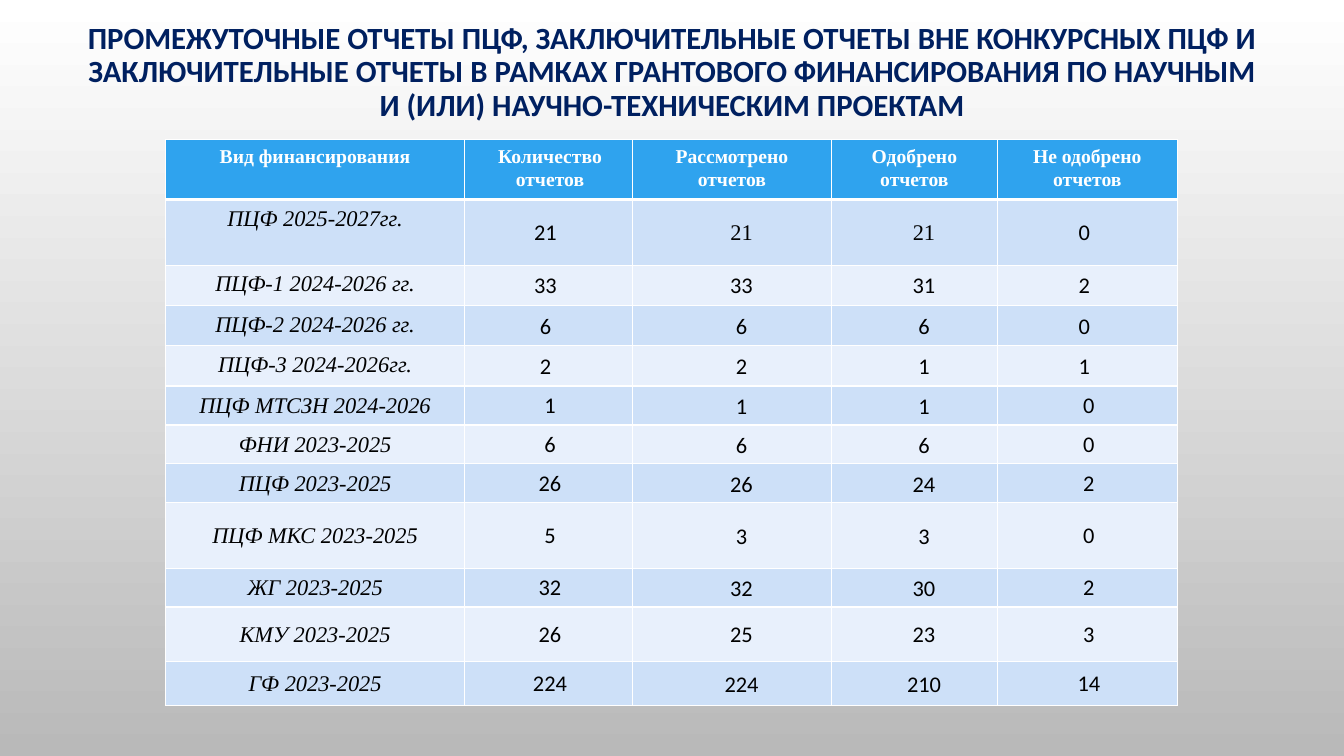
"""Build the slide that summarises research reports by type of funding."""
from dataclasses import dataclass

from lxml.etree import SubElement
from pptx import Presentation
from pptx.dml.color import RGBColor
from pptx.enum.text import MSO_ANCHOR, PP_ALIGN
from pptx.oxml.ns import qn
from pptx.util import Inches, Pt


@dataclass(frozen=True)
class Theme:
    """Colours, fonts and type sizes of the slide."""
    white: str = "FFFFFF"
    grey: str = "B9B9B9"
    navy: str = "002060"
    black: str = "000000"
    header: str = "2FA3EE"
    bands: tuple = ("CDE0F8", "E8F0FC")
    sans: str = "Calibri"
    serif: str = "Times New Roman"
    title_size: int = 22
    header_size: int = 14
    body_size: int = 16


theme = Theme()


def write(text_frame, text, font_name, size, colour, spacing, bold=False, italic=False):
    """Put one centred paragraph into a text frame and return it."""
    text_frame.text = text
    para = text_frame.paragraphs[0]
    para.alignment = PP_ALIGN.CENTER
    para.line_spacing = spacing
    font = para.runs[0].font
    font.name = font_name
    font.size = Pt(size)
    font.bold = bold
    font.italic = italic
    font.color.rgb = RGBColor.from_string(colour)
    return para


def add_borders(cell, top, bottom):
    """Draw white cell borders with the given top and bottom widths in points."""
    properties = cell._tc.get_or_add_tcPr()
    sides = (("a:lnL", 1), ("a:lnR", 1), ("a:lnT", top), ("a:lnB", bottom))
    for position, (tag, width) in enumerate(sides):
        line = SubElement(properties, qn(tag), w=str(Pt(width)))
        fill = SubElement(line, qn("a:solidFill"))
        SubElement(fill, qn("a:srgbClr"), val=theme.white)
        properties.insert(position, line)


deck = Presentation()
deck.slide_width = Inches(13.33)
deck.slide_height = Inches(7.5)
page = deck.slides.add_slide(deck.slide_layouts[6])

backdrop = page.background.fill
backdrop.gradient()
backdrop.gradient_angle = 270
for stop, position, colour in zip(backdrop.gradient_stops, (0, 1), (theme.white, theme.grey)):
    stop.position = position
    stop.color.rgb = RGBColor.from_string(colour)

title_box = page.shapes.add_textbox(Inches(0.72), Inches(-0.14), Inches(11.89), Inches(1.73))
title_frame = title_box.text_frame
title_frame.word_wrap = True
title_frame.vertical_anchor = MSO_ANCHOR.MIDDLE
write(
    title_frame,
    "ПРОМЕЖУТОЧНЫЕ ОТЧЕТЫ ПЦФ, ЗАКЛЮЧИТЕЛЬНЫЕ ОТЧЕТЫ ВНЕ КОНКУРСНЫХ ПЦФ И "
    "ЗАКЛЮЧИТЕЛЬНЫЕ ОТЧЕТЫ В РАМКАХ ГРАНТОВОГО ФИНАНСИРОВАНИЯ ПО НАУЧНЫМ "
    "И (ИЛИ) НАУЧНО-ТЕХНИЧЕСКИМ ПРОЕКТАМ",
    theme.sans, theme.title_size, theme.navy, 0.9, bold=True,
)

headings = ("Вид финансирования", "Количество отчетов", "Рассмотрено отчетов",
            "Одобрено отчетов", "Не одобрено отчетов")
reports = (
    ("ПЦФ 2025-2027гг.", 21, 21, 21, 0),
    ("ПЦФ-1 2024-2026 гг.", 33, 33, 31, 2),
    ("ПЦФ-2 2024-2026 гг.", 6, 6, 6, 0),
    ("ПЦФ-3 2024-2026гг.", 2, 2, 1, 1),
    ("ПЦФ МТСЗН 2024-2026", 1, 1, 1, 0),
    ("ФНИ 2023-2025", 6, 6, 6, 0),
    ("ПЦФ 2023-2025", 26, 26, 24, 2),
    ("ПЦФ МКС 2023-2025", 5, 3, 3, 0),
    ("ЖГ 2023-2025", 32, 32, 30, 2),
    ("КМУ 2023-2025", 26, 25, 23, 3),
    ("ГФ 2023-2025", 224, 224, 210, 14),
)
column_widths = (2.97, 1.66, 1.98, 1.64, 1.79)
row_heights = (0.6, 0.65, 0.4, 0.4, 0.4, 0.38, 0.38, 0.38, 0.65, 0.38, 0.54, 0.44)
first_compact_row = 5
indented_columns = (2, 3)

table = page.shapes.add_table(
    len(row_heights), len(column_widths), Inches(1.64), Inches(1.38),
    Inches(sum(column_widths)), Inches(sum(row_heights)),
).table
for column, width in zip(table.columns, column_widths):
    column.width = Inches(width)
for row, height in zip(table.rows, row_heights):
    row.height = Inches(height)

for column_index, heading in enumerate(headings):
    cell = table.cell(0, column_index)
    cell.fill.solid()
    cell.fill.fore_color.rgb = RGBColor.from_string(theme.header)
    add_borders(cell, 1, 3)
    para = write(cell.text_frame, heading, theme.serif, theme.header_size,
                 theme.white, 1.07, bold=True)
    if column_index == 1:
        para._p.get_or_add_pPr().set("marL", str(Inches(0.03)))

for row_index, report in enumerate(reports, start=1):
    for column_index, value in enumerate(report):
        cell = table.cell(row_index, column_index)
        is_name = column_index == 0
        is_indented = column_index in indented_columns
        is_compact = row_index >= first_compact_row and not is_indented
        cell.fill.solid()
        cell.fill.fore_color.rgb = RGBColor.from_string(theme.bands[(row_index - 1) % 2])
        add_borders(cell, 3 if row_index == 1 else 1, 1)

        if is_compact:
            cell.margin_left = Inches(0.01 if is_name else 0.04)
            cell.margin_top = cell.margin_right = Inches(0.01)
            cell.margin_bottom = 0
        elif not is_name:
            cell.margin_left = Inches(0.04)
        if is_compact or not is_name:
            cell.vertical_anchor = MSO_ANCHOR.MIDDLE

        is_serif = is_name or (row_index == 1 and is_indented)
        para = write(cell.text_frame, str(value), theme.serif if is_serif else theme.sans,
                     theme.body_size, theme.black, 1.0 if is_compact else 1.07, italic=is_name)
        if is_indented:
            para._p.get_or_add_pPr().set("marL", str(Inches(0.25)))

deck.save("out.pptx")
